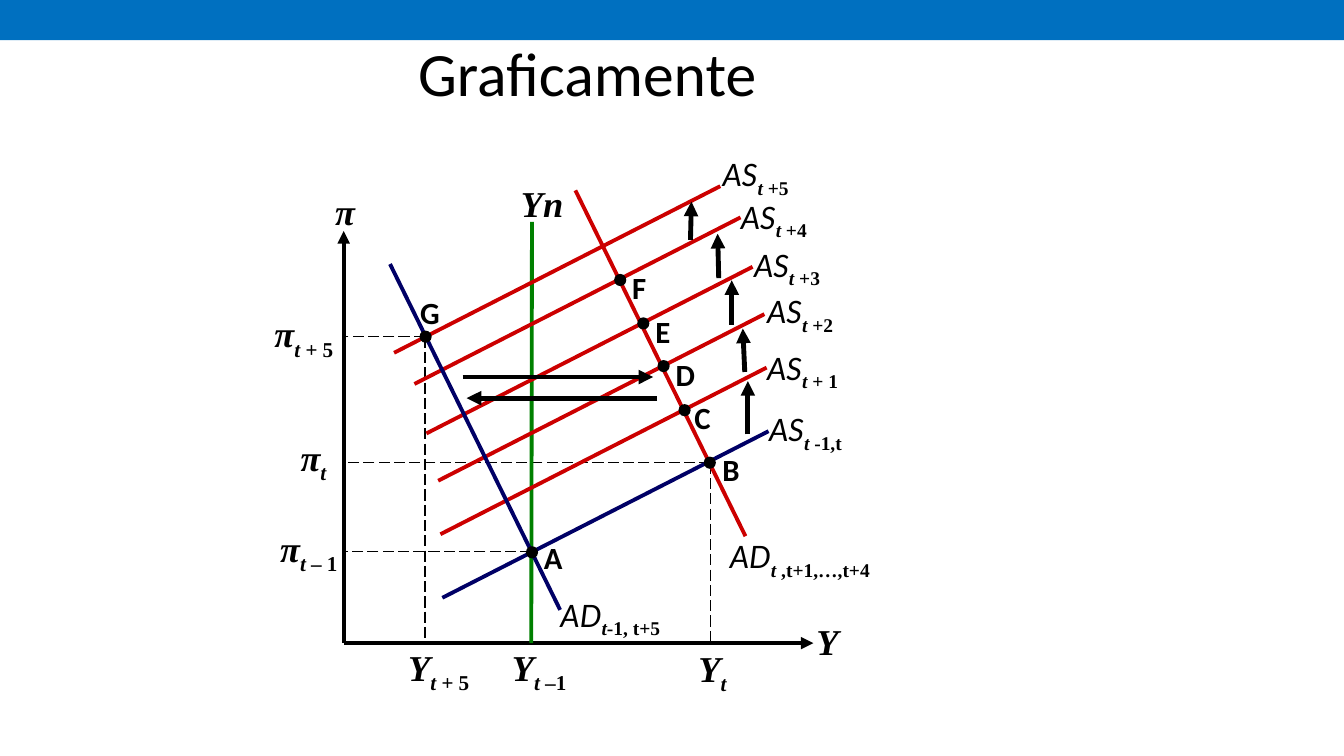
import collections

import lxml.etree
import pptx
import pptx.dml.color
import pptx.enum.dml
import pptx.enum.shapes
import pptx.enum.text
import pptx.oxml.ns
import pptx.util

Pt = pptx.util.Pt
ALIGN = pptx.enum.text.PP_ALIGN
SHAPES = pptx.enum.shapes.MSO_SHAPE
Box = collections.namedtuple("Box", "left top width height")
Face = collections.namedtuple("Face", "font size bold italic baseline")


class Theme:
    BLACK, BAR, NAVY, RED, GREEN = "000000", "0070C0", "000066", "CC0000", "008000"
    GUIDE, CURVE, AXIS, SHIFT = 1, 2.75, 3, 3.5
    FACES = {
        "title": Face("Calibri", 44, False, False, 0),
        "point": Face("Calibri", 22, True, False, 0),
        "curve": Face("Lato", 22, False, True, 0),
        "curve sub": Face("Times New Roman", 24, True, True, -25000),
        "curve sub upright": Face("Times New Roman", 24, True, False, -25000),
        "symbol": Face("Times New Roman", 26, True, True, 0),
        "symbol sub": Face("Times New Roman", 26, True, True, -25000),
        "symbol sub upright": Face("Times New Roman", 26, True, False, -25000),
    }


def color(value):
    return pptx.dml.color.RGBColor.from_string(value)


def add_solid(page, kind, box, fill):
    solid = page.shapes.add_shape(kind, *map(Pt, box))
    solid.shadow.inherit = False
    solid.fill.solid()
    solid.fill.fore_color.rgb = color(fill)
    solid.line.fill.background()


def add_line(page, box, start, end, stroke, width, arrow=False, dashed=False):
    """Draw a line between two points counted from the corner of the box."""
    line = page.shapes.add_connector(
        pptx.enum.shapes.MSO_CONNECTOR.STRAIGHT,
        Pt(box.left + start[0]), Pt(box.top + start[1]),
        Pt(box.left + end[0]), Pt(box.top + end[1]))
    line.line.color.rgb = color(stroke)
    line.line.width = Pt(width)
    if dashed:
        line.line.dash_style = pptx.enum.dml.MSO_LINE.LONG_DASH
    if arrow:
        tail = lxml.etree.SubElement(line.line._get_or_add_ln(), pptx.oxml.ns.qn("a:tailEnd"))
        tail.set("type", "triangle")
    lxml.etree.SubElement(line._element.spPr, pptx.oxml.ns.qn("a:effectLst"))


def add_text(page, box, spans, align=ALIGN.LEFT, insets=None, middle=False):
    """Write spans, pairs of words and face name, on one line."""
    label = page.shapes.add_textbox(*map(Pt, box))
    frame = label.text_frame
    frame.word_wrap = True
    if insets:
        frame.margin_left, frame.margin_top, frame.margin_right, frame.margin_bottom = map(Pt, insets)
    if middle:
        frame.vertical_anchor = pptx.enum.text.MSO_ANCHOR.MIDDLE
    para = frame.paragraphs[0]
    para.alignment = align
    for words, name in spans:
        face = Theme.FACES[name]
        span = para.add_run()
        span.text = words
        span.font.name, span.font.size = face.font, Pt(face.size)
        span.font.bold, span.font.italic = face.bold, face.italic
        span.font.color.rgb = color(Theme.BLACK)
        if face.baseline:
            span._r.get_or_add_rPr().set("baseline", str(face.baseline))


def draw_heading(page, box):
    add_solid(page, SHAPES.RECTANGLE, Box(box.left, box.top, box.width, 28.8), Theme.BAR)
    add_text(page, Box(box.left + 48, box.top + 6, 743, 90), [("Graficamente", "title")],
             ALIGN.CENTER, middle=True)


def draw_axes(page, box):
    origin = (65.5, 351.4)
    for end in ((65.5, 57), (401, 351.4)):
        add_line(page, box, origin, end, Theme.BLACK, Theme.AXIS, arrow=True)
    add_line(page, box, (200, 50.4), (199.5, 351.4), Theme.GREEN, Theme.CURVE)

    # Names of the axes and of the natural level, then the values marked on them
    add_text(page, Box(box.left + 403.2, box.top + 334, 32.4, 35), [("Y", "symbol")],
             insets=(0, 0, 0, 3.6))
    labels = [
        (45.4, 23.8, 42, "π", "", ""),
        (185, 18, 68, "Yn", "", ""),
        (5, 111, 64, "π", "t + ", "5"),
        (18.7, 199.4, 50.4, "π", "t", ""),
        (8.6, 264.2, 64, "π", "t ", "– 1"),
        (104.4, 349.2, 68, "Y", "t + ", "5"),
        (178.6, 349.2, 68, "Y", "t –", "1"),
        (311.8, 350, 42, "Y", "t", ""),
    ]
    for left, top, width, symbol, sub, upright in labels:
        spans = [(symbol, "symbol"), (sub, "symbol sub"), (upright, "symbol sub upright")]
        add_text(page, Box(box.left + left, box.top + top, width, 39),
                 [span for span in spans if span[0]],
                 ALIGN.CENTER if symbol == "π" else ALIGN.LEFT)


def draw_curves(page, box):
    # Name, start of the line, place of the label, rest of the subscript, colour
    supply, demand = (233, -119), (121.5, 247)
    curves = [
        ("AS", supply, (136, 319), (369.4, 183.6), " -1,t", Theme.NAVY),
        ("AS", supply, (134.6, 273.6), (368, 139.7), " + 1", Theme.RED),
        ("AS", supply, (133, 235.4), (368, 99.4), " +2", Theme.RED),
        ("AS", supply, (124.6, 201.6), (358.6, 66.2), " +3", Theme.RED),
        ("AS", supply, (116, 166.3), (349.2, 31.7), " +4", Theme.RED),
        ("AS", supply, (101.5, 144), (336.2, 1.4), " +5", Theme.RED),
        ("AD", demand, (231, 28), (341.3, 274.3), " ,t+1,…,t+4", Theme.RED),
        ("AD", demand, (98.6, 80.6), (220.3, 316), "-1, t+5", Theme.NAVY),
    ]
    for name, run, start, place, period, stroke in curves:
        end = (start[0] + run[0], start[1] + run[1])
        add_line(page, box, start, end, stroke, Theme.CURVE)
        add_text(page, Box(box.left + place[0], box.top + place[1], 132, 34),
                 [(name, "curve"), ("t", "curve sub"), (period, "curve sub upright")],
                 insets=(0, 0, 0, 7.2))


def draw_guides(page, box):
    for across, down in ((199.5, 286), (327.5, 222.5), (123.5, 132.5)):
        for end in ((66.5, down), (across, 351)):
            add_line(page, box, (across, down), end, Theme.BLACK, Theme.GUIDE, dashed=True)


def draw_shifts(page, box):
    shifts = [
        ((354.2, 202.3), (354.2, 164.2)),
        ((352, 157.7), (350.6, 126.7)),
        ((342.7, 123.8), (342.7, 92.2)),
        ((333.4, 90.7), (332.6, 59)),
        ((313.2, 63.4), (313.9, 36)),
        ((150.5, 161.3), (286.6, 161.3)),
        ((289.4, 176.4), (153.4, 176.4)),
    ]
    for start, end in shifts:
        add_line(page, box, start, end, Theme.BLACK, Theme.SHIFT, arrow=True)


def draw_points(page, box):
    # Letter, centre of the dot, offset of the letter from it
    size = 8.7
    points = [
        ("A", (200, 286.5), (1.5, -13)),
        ("B", (327, 222.5), (2, -12)),
        ("C", (309, 185), (0, -12)),
        ("D", (294, 153.5), (1.5, -11)),
        ("E", (279.5, 123), (1.5, -11.5)),
        ("F", (263, 92), (1.5, -11.5)),
        ("G", (124, 132.5), (-11, -34.5)),
    ]
    for letter, center, offset in points:
        left, top = box.left + center[0], box.top + center[1]
        add_solid(page, SHAPES.OVAL, Box(left - size / 2, top - size / 2, size, size), Theme.BLACK)
        add_text(page, Box(left + offset[0], top + offset[1], 30, 34), [(letter, "point")])


def main():
    deck = pptx.Presentation()
    deck.slide_width, deck.slide_height = Pt(960), Pt(540)
    page = deck.slides.add_slide(deck.slide_layouts[6])
    draw_heading(page, Box(0, 0, 960, 96))
    diagram = Box(180, 108, 474, 390)
    for draw in (draw_guides, draw_axes, draw_curves, draw_shifts, draw_points):
        draw(page, diagram)
    deck.save("out.pptx")


if __name__ == "__main__":
    main()
